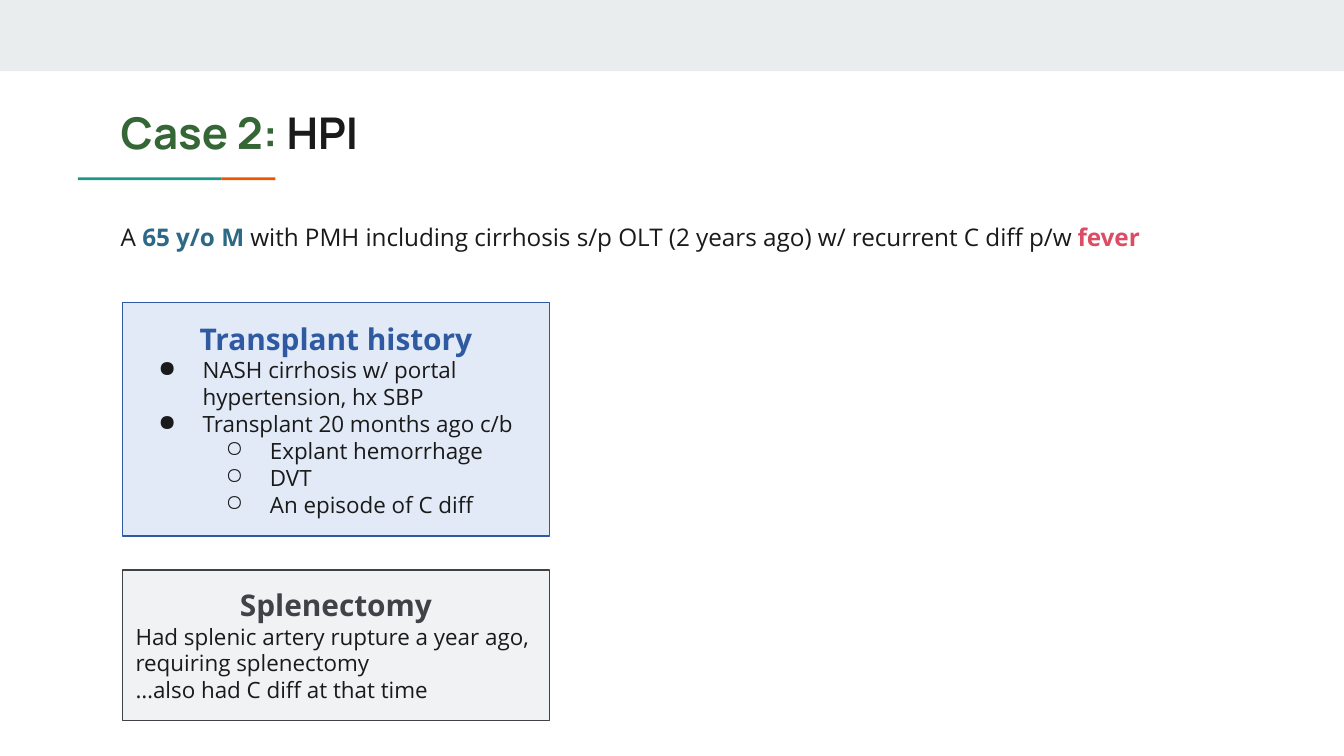
from dataclasses import dataclass
from typing import NamedTuple

from lxml.etree import SubElement
from pptx import Presentation
from pptx.dml.color import RGBColor
from pptx.enum.shapes import MSO_SHAPE
from pptx.enum.text import MSO_ANCHOR, PP_ALIGN
from pptx.oxml.ns import qn
from pptx.util import Inches, Pt

WIDTH = 10
HEIGHT = WIDTH * 9 / 16
INK = "1A1A1A"
BODY_FONT = "Open Sans"
INSET = 0.1
BULLETS = "●○"
CARD_LEFT, CARD_WIDTH = 0.91, 3.18
CARD_TEXT_SIZE = 12


class Area(NamedTuple):
    left: float
    top: float
    width: float
    height: float


class Run(NamedTuple):
    text: str
    color: str = INK
    bold: bool = False


class Line(NamedTuple):
    text: str
    level: int | None = None


@dataclass
class Card:
    heading: str
    lines: list[Line]
    top: float
    height: float
    fill: str
    accent: str


CARDS = [
    Card("Transplant history", [
        Line("NASH cirrhosis w/ portal hypertension, hx SBP", 0),
        Line("Transplant 20 months ago c/b", 0),
        Line("Explant hemorrhage", 1),
        Line("DVT", 1),
        Line("An episode of C diff", 1),
    ], top=2.25, height=1.74, fill="E2EAF7", accent="2F5AA2"),
    Card("Splenectomy", [
        Line("Had splenic artery rupture a year ago, requiring splenectomy"),
        Line("…also had C diff at that time"),
    ], top=4.24, height=1.12, fill="F1F2F3", accent="404247"),
]


def rgb(color: str) -> RGBColor:
    return RGBColor.from_string(color)


def add_rect(slide, area: Area, fill: str, line: str | None = None):
    rect = slide.shapes.add_shape(MSO_SHAPE.RECTANGLE, *map(Inches, area))
    rect.shadow.inherit = False
    rect.fill.solid()
    rect.fill.fore_color.rgb = rgb(fill)
    if line:
        rect.line.color.rgb = rgb(line)
        rect.line.width = Pt(0.75)
    else:
        rect.line.fill.background()
    return rect


def prepare_frame(shape, anchor=MSO_ANCHOR.TOP):
    frame = shape.text_frame
    frame.word_wrap = True
    frame.vertical_anchor = anchor
    frame.margin_left = frame.margin_right = Inches(INSET)
    frame.margin_top = frame.margin_bottom = Inches(INSET)
    return frame


def add_bullet(paragraph, level: int, size: float) -> None:
    paragraph.level = level
    properties = paragraph._p.get_or_add_pPr()
    properties.set("marL", str(Inches(0.5 * (level + 1))))
    properties.set("indent", str(Inches(-0.33)))
    bullet_color = SubElement(properties, qn("a:buClr"))
    SubElement(bullet_color, qn("a:srgbClr"), val=INK)
    SubElement(properties, qn("a:buSzPts"), val=str(round(size * 100)))
    SubElement(properties, qn("a:buChar"), char=BULLETS[level])


def write(paragraph, *runs: Run, size: float, font: str = BODY_FONT,
          align=PP_ALIGN.LEFT, spacing: float = 1.0, level: int | None = None) -> None:
    paragraph.alignment = align
    paragraph.line_spacing = spacing
    if level is not None:
        add_bullet(paragraph, level, size)
    for text, color, bold in runs:
        run = paragraph.add_run()
        run.text = text
        run.font.name = font
        run.font.size = Pt(size)
        run.font.bold = bold
        run.font.color.rgb = rgb(color)


def add_text(slide, area: Area, *runs: Run, **style) -> None:
    box = slide.shapes.add_textbox(*map(Inches, area))
    write(prepare_frame(box).paragraphs[0], *runs, **style)


def add_card(slide, card: Card) -> None:
    area = Area(CARD_LEFT, card.top, CARD_WIDTH, card.height)
    frame = prepare_frame(add_rect(slide, area, card.fill, card.accent), MSO_ANCHOR.MIDDLE)
    write(frame.paragraphs[0], Run(card.heading, card.accent, True), size=16,
          align=PP_ALIGN.CENTER)
    for line in card.lines:
        write(frame.add_paragraph(), Run(line.text), size=CARD_TEXT_SIZE, level=line.level)


def main() -> None:
    deck = Presentation()
    deck.slide_width, deck.slide_height = Inches(WIDTH), Inches(HEIGHT)
    slide = deck.slides.add_slide(deck.slide_layouts[6])

    add_rect(slide, Area(0, 0, WIDTH, 0.53), "E9EDEE")
    add_rect(slide, Area(0.58, 1.32, 1.07, 0.02), "1A9988")
    add_rect(slide, Area(1.65, 1.32, 0.4, 0.02), "EB5600")

    add_text(slide, Area(0.8, 0.69, 8.41, 0.59),
             Run("Case 2:", "356635", True), Run(" HPI", INK, True),
             size=23.4, font="Manrope")
    add_text(slide, Area(0.8, 1.52, 8.41, 2.47),
             Run("A "), Run("65 y/o M", "2D6987", True),
             Run(" with PMH including cirrhosis s/p OLT (2 years ago) w/ recurrent C diff p/w "),
             Run("fever", "DC4C64", True),
             size=13, spacing=1.15)
    for card in CARDS:
        add_card(slide, card)

    deck.save("out.pptx")


if __name__ == "__main__":
    main()
